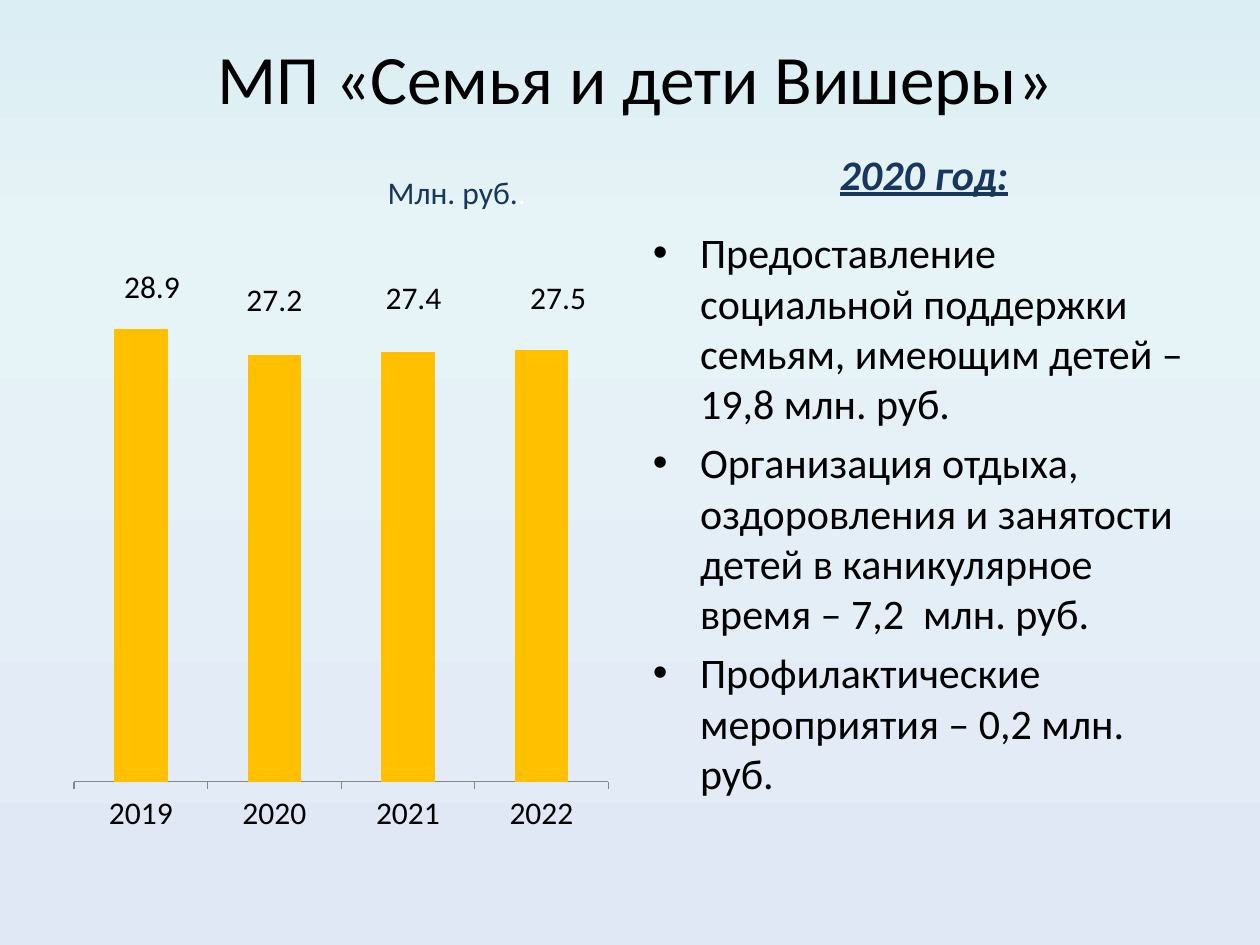
import copy
from dataclasses import dataclass

import pptx
import pptx.chart.data
import pptx.dml.color
import pptx.enum.chart
import pptx.enum.text
import pptx.oxml
import pptx.oxml.ns
import pptx.util

Pt = pptx.util.Pt
qn = pptx.oxml.ns.qn
Align = pptx.enum.text.PP_ALIGN
Anchor = pptx.enum.text.MSO_ANCHOR
ChartEnum = pptx.enum.chart
CHART_NAMESPACE = "http://schemas.openxmlformats.org/drawingml/2006/chart"


@dataclass(frozen=True)
class Theme:
    font: str = "Calibri"
    text: str = "000000"
    accent: str = "17375E"
    light: str = "FFFFFF"
    bar: str = "FFC000"
    axis: str = "868686"
    background: tuple = ((0, "DBEEF4"), (0.25, "E6F3F7"), (1, "E1E8F5"))
    title_size: float = 39.6
    body_size: float = 24
    chart_size: float = 18


THEME = Theme()
CATEGORIES = ("2019", "2020", "2021", "2022")
VALUES = (28.9, 27.2, 27.4, 27.5)
# Label shifts from the bar centres, as fractions of the chart size
LABEL_SHIFTS = ((0.02, -0.43), (0, -0.43), (0.01, -0.43), (0.03, -0.43))
MEASURES = (
    "Предоставление социальной поддержки семьям, имеющим детей – 19,8 млн. руб.",
    "Организация отдыха, оздоровления и занятости детей в каникулярное время – 7,2  млн. руб.",
    "Профилактические мероприятия – 0,2 млн. руб.",
)


def rgb(value):
    return pptx.dml.color.RGBColor.from_string(value)


def set_font(font, size, color=THEME.text, **extra):
    formats = {"name": THEME.font, "size": Pt(size), **extra}
    for name, value in formats.items():
        setattr(font, name, value)
    font.color.rgb = rgb(color)


def add_text_frame(slide, box, anchor):
    frame = slide.shapes.add_textbox(*map(Pt, box)).text_frame
    frame.word_wrap = True
    frame.vertical_anchor = anchor
    return frame


def add_run(paragraph, text, size, color=THEME.text, **extra):
    run = paragraph.add_run()
    run.text = text
    set_font(run.font, size, color, **extra)


def add_heading(slide, box, runs, size, **extra):
    """Place one centred line made of (text, color) runs."""
    paragraph = add_text_frame(slide, box, Anchor.MIDDLE).paragraphs[0]
    paragraph.alignment = Align.CENTER
    for text, color in runs:
        add_run(paragraph, text, size, color, **extra)


def paint_background(slide):
    fill = slide.background.fill
    fill.gradient()
    fill.gradient_angle = 270
    stop_list = slide.element.find(".//" + qn("a:gsLst"))
    stop_list.append(copy.deepcopy(stop_list[-1]))
    for stop, (position, color) in zip(fill.gradient_stops, THEME.background):
        stop.position = position
        stop.color.rgb = rgb(color)


def manual_layout(target="", **values):
    parts = "".join(f'<c:{name} val="{value}"/>' for name, value in values.items())
    return pptx.oxml.parse_xml(
        f'<c:layout xmlns:c="{CHART_NAMESPACE}"><c:manualLayout>{target}{parts}'
        "</c:manualLayout></c:layout>"
    )


def hide_leader_lines(chart):
    tag = qn("c:showLeaderLines")
    for labels in chart.element.iter(qn("c:dLbls")):
        for setting in labels.findall(tag):
            labels.remove(setting)
        labels.append(pptx.oxml.parse_xml(
            f'<c:showLeaderLines xmlns:c="{CHART_NAMESPACE}" val="0"/>'
        ))


def add_budget_chart(slide, box):
    data = pptx.chart.data.CategoryChartData(number_format="0.0")
    data.categories = CATEGORIES
    data.add_series("Series 1", VALUES)
    chart = slide.shapes.add_chart(
        ChartEnum.XL_CHART_TYPE.COLUMN_STACKED, *map(Pt, box), data
    ).chart
    chart.has_legend = False
    chart.has_title = False
    set_font(chart.font, THEME.chart_size)

    # Axes
    value_axis = chart.value_axis
    for name, value in {
        "minimum_scale": 0, "maximum_scale": 35,
        "has_major_gridlines": False, "visible": False,
    }.items():
        setattr(value_axis, name, value)
    category_axis = chart.category_axis
    category_axis.major_tick_mark = ChartEnum.XL_TICK_MARK.OUTSIDE
    category_axis.format.line.color.rgb = rgb(THEME.axis)

    # Bars and their labels
    plot = chart.plots[0]
    for name, value in {
        "gap_width": 150, "overlap": 100, "vary_by_categories": False,
    }.items():
        setattr(plot, name, value)
    series = plot.series[0]
    series.format.fill.solid()
    series.format.fill.fore_color.rgb = rgb(THEME.bar)
    series.data_labels.show_value = True
    for index in range(len(VALUES)):
        label = series.points[index].data_label
        label.position = ChartEnum.XL_LABEL_POSITION.CENTER
    for label, (x, y) in zip(chart.element.iter(qn("c:dLbl")), LABEL_SHIFTS):
        label.insert(1, manual_layout(x=x, y=y))
    hide_leader_lines(chart)

    # Inner plot area
    plot_area = chart.element.find(".//" + qn("c:plotArea"))
    for old_layout in plot_area.findall(qn("c:layout")):
        plot_area.remove(old_layout)
    plot_area.insert(0, manual_layout(
        '<c:layoutTarget val="inner"/><c:xMode val="edge"/><c:yMode val="edge"/>',
        x=0.02, y=0.02, w=0.96, h=0.88,
    ))


def add_measures(slide, box):
    frame = add_text_frame(slide, box, Anchor.TOP)
    for index, text in enumerate(MEASURES):
        paragraph = frame.add_paragraph() if index else frame.paragraphs[0]
        paragraph.space_before = Pt(0.2 * THEME.body_size)
        add_run(paragraph, text, THEME.body_size)
        properties = paragraph._p.get_or_add_pPr()
        properties.set("marL", str(Pt(27)))
        properties.set("indent", str(Pt(-27)))
        for tag, name, value in (("a:buFont", "typeface", "Arial"), ("a:buChar", "char", "•")):
            bullet = pptx.oxml.parse_xml(
                f'<{tag} xmlns:a="http://schemas.openxmlformats.org/drawingml/2006/main"'
                f' {name}="{value}"/>'
            )
            properties.append(bullet)


def main():
    presentation = pptx.Presentation()
    presentation.slide_width, presentation.slide_height = Pt(720), Pt(540)
    slide = presentation.slides.add_slide(presentation.slide_layouts[6])
    paint_background(slide)

    # Title
    add_heading(slide, (18, 21.6, 690, 44.6),
                [("МП «Семья и дети Вишеры»", THEME.text)], THEME.title_size)
    # Two columns: chart and measures
    add_budget_chart(slide, (36, 126, 318, 356.4))
    add_measures(slide, (366, 126, 318, 356.4))
    # Column headings
    add_heading(slide, (468, 78, 120, 42), [("2020 год:", THEME.accent)],
                THEME.body_size, bold=True, italic=True, underline=True)
    add_heading(slide, (210, 99.4, 102, 21),
                [("Млн. руб.", THEME.accent), (".", THEME.light)], THEME.chart_size)

    presentation.save("out.pptx")


if __name__ == "__main__":
    main()
